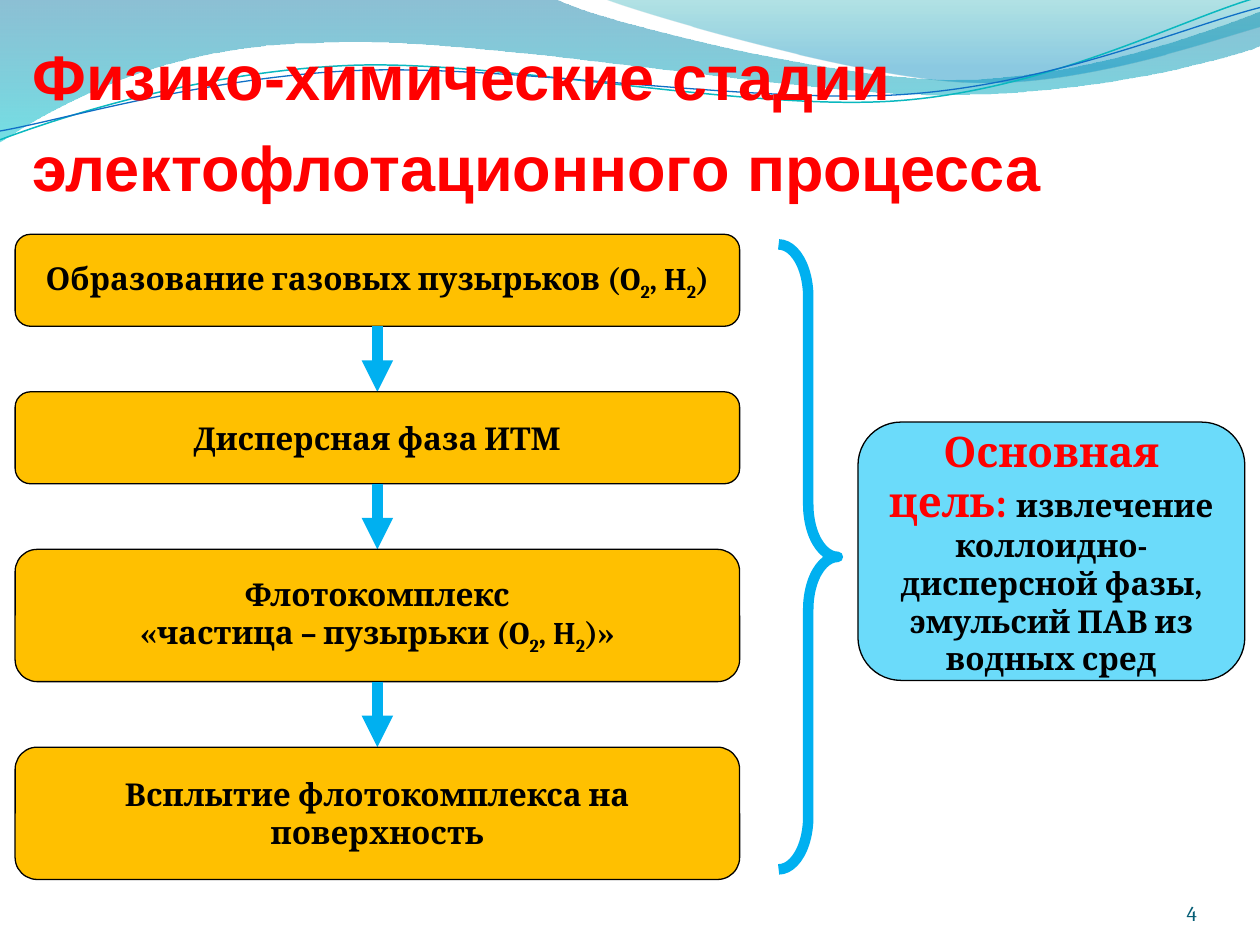
from pptx import Presentation
from pptx.dml.color import RGBColor
from pptx.enum.lang import MSO_LANGUAGE_ID
from pptx.enum.shapes import MSO_CONNECTOR, MSO_SHAPE
from pptx.enum.text import MSO_ANCHOR, PP_ALIGN
from pptx.oxml.ns import qn
from pptx.util import Inches, Pt
from lxml import etree

RED = RGBColor(0xFF, 0x00, 0x00)
BLACK = RGBColor(0x00, 0x00, 0x00)
AMBER = RGBColor(0xFF, 0xC0, 0x00)
SKY = RGBColor(0x6B, 0xDB, 0xFA)
BLUE = RGBColor(0x00, 0xB0, 0xF0)
NAVY = RGBColor(0x04, 0x5D, 0x75)
DEEP = RGBColor(0x00, 0x74, 0xA1)
AQUA = RGBColor(0x00, 0xC6, 0xCF)
TEAL = RGBColor(0x00, 0xA1, 0xA9)
OCEAN = RGBColor(0x00, 0x8B, 0xBF)
CYAN = RGBColor(0x0A, 0xB8, 0xBF)
COBALT = RGBColor(0x0F, 0x6F, 0xC6)

BODY = {"name": "Cambria", "size": Pt(18), "bold": True}
STEPS = [
    ("Образование газовых пузырьков (O_2_, H_2_)", 0.73),
    ("Дисперсная фаза ИТМ", 0.73),
    ("Флотокомплекс\n«частица – пузырьки (O_2_, H_2_)»", 1.05),
    ("Всплытие флотокомплекса на поверхность", 1.05),
]

# Each wave is a list of points (2 numbers) and Bezier curves (6 numbers).
BAND = [(0, -0.01), (4.4, -0.01), (4.76, 0.17, 6.64, 0.63, 7.58, 0.63),
        (8.53, 0.63, 9.58, 0.26, 10, 0.09), (10.01, 0.36),
        (9.83, 0.44, 8.7, 0.76, 7.46, 0.75), (6.22, 0.75, 3.82, 0.28, 2.57, 0.34),
        (1.29, 0.35, 0.46, 0.83, -0.01, 1.13)]
CREST = [(4.79, -0.01), (5.09, 0.11, 6.82, 0.62, 7.69, 0.65),
         (8.56, 0.69, 9.61, 0.32, 10, 0.21), (10, 0)]
CURVES = [
    ([(0, 1.11), (0.48, 0.93, 1.58, 0.57, 2.77, 0.52),
      (3.95, 0.47, 5.93, 0.89, 7.13, 0.8), (8.33, 0.71, 9.38, 0.15, 9.98, -0.02)], CYAN, 0.85),
    ([(0, 1.04), (0.47, 0.96, 1.64, 0.61, 2.83, 0.56),
      (4.03, 0.51, 5.97, 0.83, 7.17, 0.75), (8.36, 0.67, 9.41, 0.21, 10, 0.06)], COBALT, 0.75),
]


def add_wave(slide, parts, close):
    """Build the outline from the end points, then bend lines into curves."""
    ends = [tuple(map(Inches, part[-2:])) for part in parts]
    pen = slide.shapes.build_freeform(*ends[0])
    pen.add_line_segments(ends[1:], close=close)
    wave = pen.convert_to_shape()
    wave.shadow.inherit = False
    lines = list(wave._element.iter(qn("a:lnTo")))
    for line, part in zip(lines, parts[1:]):
        if len(part) == 6:
            line.tag = qn("a:cubicBezTo")
            for i in (0, 2):
                spot = etree.Element(qn("a:pt"))
                spot.set("x", str(Inches(part[i]) - wave.left))
                spot.set("y", str(Inches(part[i + 1]) - wave.top))
                line.insert(i // 2, spot)
    return wave


def fill_fade(shape, stops):
    """Fill from top to bottom; a stop is colour, position, opacity in percent."""
    shape.fill.gradient()
    shape.fill.gradient_angle = 270
    for stop, (color, place, _) in zip(shape.fill.gradient_stops, stops):
        stop.color.rgb = color
        stop.position = place
    for tint, (_, _, alpha) in zip(shape._element.iter(qn("a:srgbClr")), stops):
        etree.SubElement(tint, qn("a:alpha")).set("val", str(alpha * 1000))
    shape.line.fill.background()


def set_line(line, color, width):
    line.color.rgb = color
    line.width = Pt(width)


def add_run(para, text, color, style):
    run = para.add_run()
    run.text = text
    for key, value in style.items():
        setattr(run.font, key, value)
    run.font.language_id = MSO_LANGUAGE_ID.RUSSIAN
    run.font.color.rgb = color
    return run


def add_marked(para, text, color, style):
    """Write text in which _2_ marks a subscript and a newline a line break."""
    for row, line in enumerate(text.split("\n")):
        if row:
            para.add_line_break()
        for i, piece in enumerate(line.split("_")):
            run = add_run(para, piece, color, style)
            if i % 2:
                run._r.get_or_add_rPr().set("baseline", "-25000")


def add_shape(slide, kind, box):
    shape = slide.shapes.add_shape(kind, *map(Inches, box))
    shape.shadow.inherit = False
    return shape


def add_card(slide, box, color):
    """Add a rounded box and return its centred paragraph."""
    card = add_shape(slide, MSO_SHAPE.FLOWCHART_ALTERNATE_PROCESS, box)
    card.fill.solid()
    card.fill.fore_color.rgb = color
    set_line(card.line, BLACK, 0.75)
    frame = card.text_frame
    frame.word_wrap = True
    frame.vertical_anchor = MSO_ANCHOR.MIDDLE
    frame.paragraphs[0].alignment = PP_ALIGN.CENTER
    return frame.paragraphs[0]


def add_arrow(slide, x, top, end):
    arrow = slide.shapes.add_connector(
        MSO_CONNECTOR.STRAIGHT, Inches(x), Inches(top), Inches(x), Inches(end))
    set_line(arrow.line, BLUE, 6)
    etree.SubElement(arrow.line._get_or_add_ln(), qn("a:tailEnd")).set("type", "triangle")
    etree.SubElement(arrow._element.spPr, qn("a:effectLst"))


def add_text(slide, box):
    frame = slide.shapes.add_textbox(*map(Inches, box)).text_frame
    frame.word_wrap = True
    return frame


def draw_waves(slide):
    fill_fade(add_wave(slide, BAND, True), [(DEEP, 0, 45), (AQUA, 1, 55)])
    fill_fade(add_wave(slide, CREST, True), [(TEAL, 0, 30), (OCEAN, 0.8, 45)])
    for parts, color, width in CURVES:
        curve = add_wave(slide, parts, False)
        curve.fill.background()
        set_line(curve.line, color, width)


def draw_title(slide, box):
    para = add_text(slide, box).paragraphs[0]
    para.line_spacing = 1.2
    add_run(para, "Физико-химические стадии электофлотационного процесса", RED,
            {"name": "Arial", "size": Pt(36), "bold": True})


def draw_goal(slide, box):
    para = add_card(slide, box, SKY)
    add_run(para, "Основная цель: ", RED, {**BODY, "size": Pt(24)})
    add_run(para, "извлечение коллоидно-дисперсной фазы, эмульсий ПАВ из водных сред",
            BLACK, BODY)


def draw_brace(slide, box):
    brace = add_shape(slide, MSO_SHAPE.RIGHT_BRACE, box)
    brace.adjustments[0] = 0.886
    brace.adjustments[1] = 0.5
    brace.fill.background()
    set_line(brace.line, BLUE, 6)


def draw_steps(slide, left, top, width, gap):
    for i, (text, height) in enumerate(STEPS):
        if i:
            add_arrow(slide, left + width / 2, top - gap, top)
        para = add_card(slide, (left, top, width, height), AMBER)
        add_marked(para, text, BLACK, BODY)
        top += height + gap


def draw_number(slide, box):
    frame = add_text(slide, box)
    for side in ("left", "top", "right", "bottom"):
        setattr(frame, f"margin_{side}", 0)
    frame.vertical_anchor = MSO_ANCHOR.BOTTOM
    frame.paragraphs[0].alignment = PP_ALIGN.RIGHT
    add_run(frame.paragraphs[0], "4", NAVY, {"name": "Cambria", "size": Pt(12)})


def main():
    deck = Presentation()
    deck.slide_width, deck.slide_height = Inches(10), Inches(7.5)
    slide = deck.slides.add_slide(deck.slide_layouts[6])
    draw_waves(slide)
    draw_title(slide, (0.16, 0.13, 9.75, 1.5))
    draw_goal(slide, (6.81, 3.35, 3.07, 2.05))
    draw_brace(slide, (6.18, 1.94, 0.47, 4.96))
    draw_steps(slide, 0.12, 1.86, 5.75, 0.52)
    draw_number(slide, (8.67, 6.95, 0.83, 0.4))
    deck.save("out.pptx")


if __name__ == "__main__":
    main()
